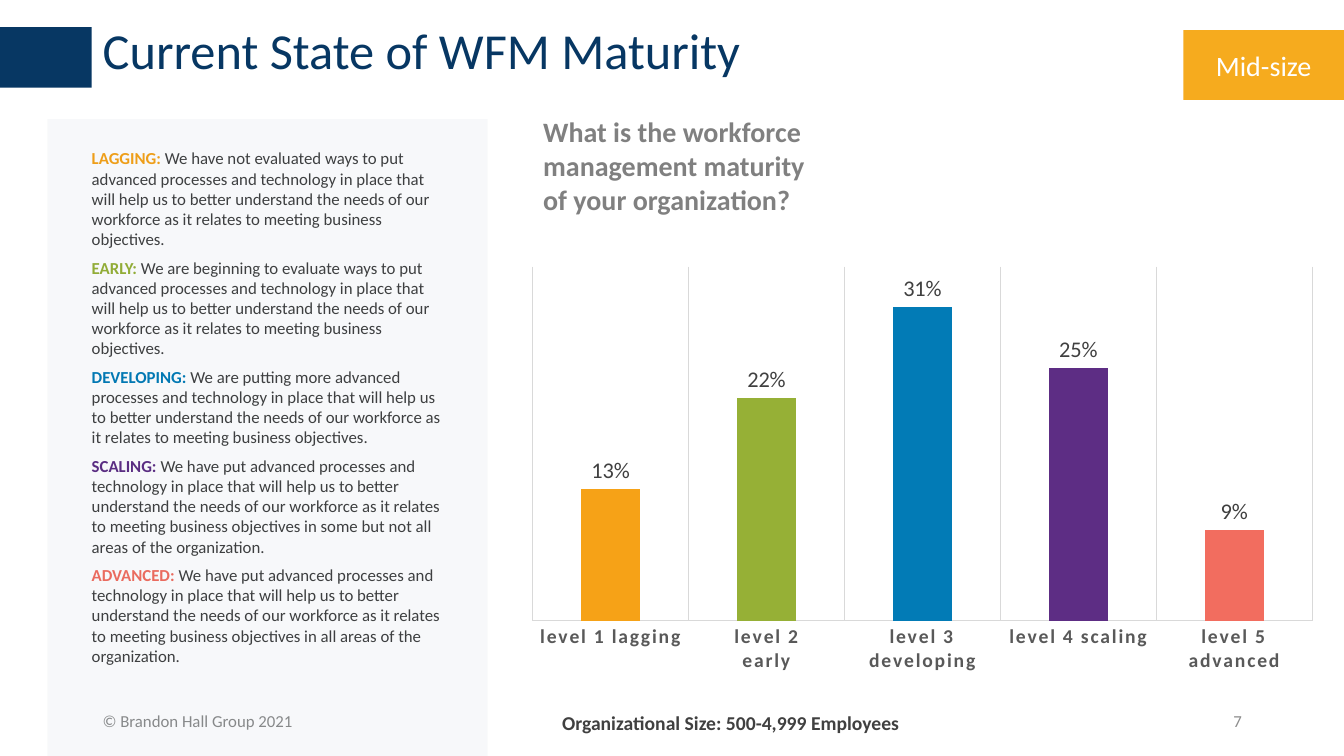
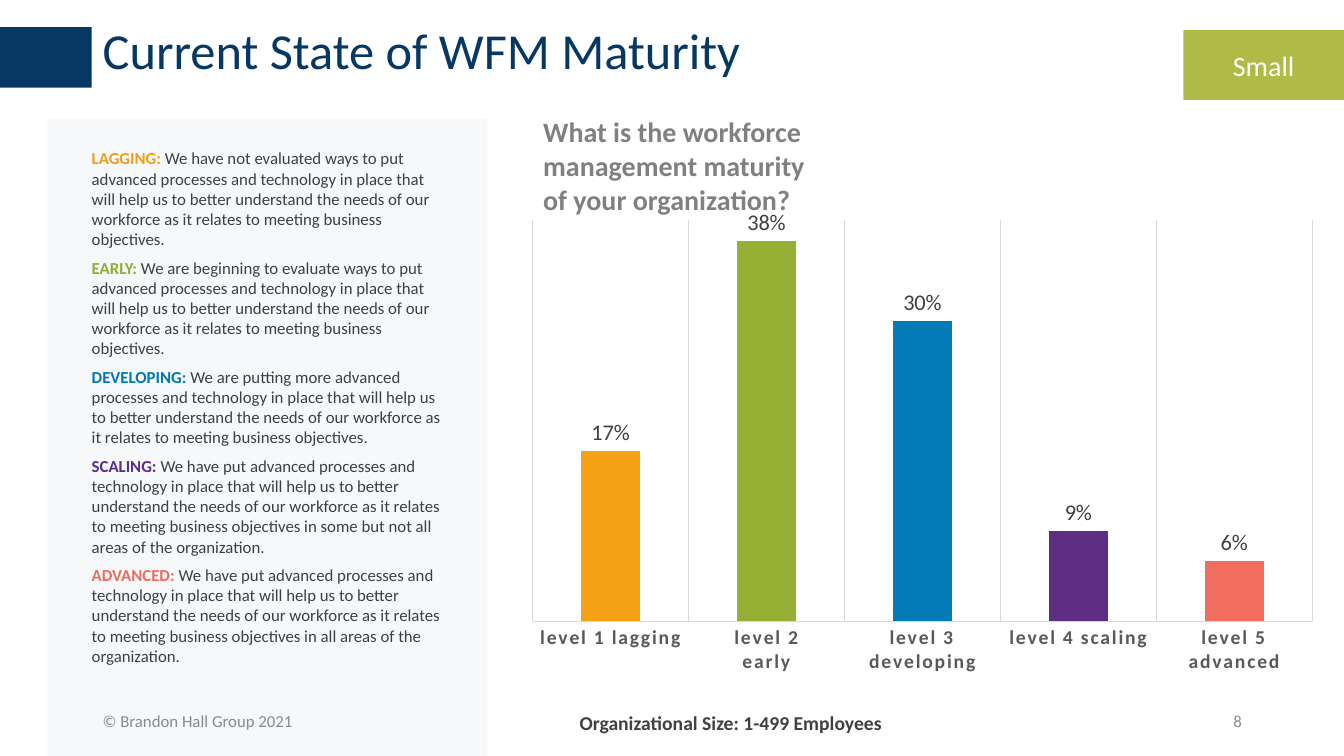
from dataclasses import dataclass
from typing import NamedTuple

from lxml.etree import SubElement
from pptx import Presentation
from pptx.chart.data import CategoryChartData
from pptx.dml.color import RGBColor
from pptx.enum.chart import XL_CHART_TYPE, XL_LABEL_POSITION, XL_TICK_LABEL_POSITION, XL_TICK_MARK
from pptx.enum.shapes import MSO_SHAPE
from pptx.enum.text import MSO_ANCHOR, MSO_AUTO_SIZE, PP_ALIGN
from pptx.oxml import parse_xml
from pptx.oxml.ns import nsdecls, qn
from pptx.util import Pt

FONT = "Calibri"
NAVY, INK, WHITE = "073763", "404040", "FFFFFF"
AXIS_TEXT, QUESTION_GRAY, FOOTER_GRAY, GRID = "595959", "808080", "8C8C8C", "D9D9D9"


class Box(NamedTuple):
    left: float
    top: float
    width: float
    height: float

    def lengths(self) -> list:
        return [Pt(value) for value in self]


BAND = Box(0, 19.4, 65.5, 43.2)
TITLE = Box(66.2, 15.1, 760, 57.6)
TAG = Box(845.3, 21.6, 114.7, 49.7)
PANEL = Box(33.8, 85, 314.6, 455)
DEFINITIONS = Box(58.3, 102.2, 266.4, 395.3)
CHART = Box(369.4, 101.5, 578.9, 391.7)
QUESTION = Box(380.9, 78.5, 204.5, 79.9)
SIZE_NOTE = Box(330.5, 504, 383, 24.5)
COPYRIGHT = Box(66.2, 500.4, 324, 28.8)
PAGE_NUMBER = Box(678.2, 500.4, 216, 28.8)

PRACTICE = (
    "advanced processes and technology in place that will help us to better understand "
    "the needs of our workforce as it relates to meeting business objectives"
)


@dataclass
class Level:
    name: str
    category: str
    color: str
    opening: str
    ending: str = "."


LEVELS = [
    Level("LAGGING", "level 1 lagging", "F6A217", "We have not evaluated ways to put"),
    Level("EARLY", "level 2\nearly", "96B036", "We are beginning to evaluate ways to put"),
    Level("DEVELOPING", "level 3 developing", "027BB6", "We are putting more"),
    Level("SCALING", "level 4 scaling", "5D2D84", "We have put",
          " in some but not all areas of the organization."),
    Level("ADVANCED", "level 5 advanced", "F26D5F", "We have put",
          " in all areas of the organization."),
]


@dataclass
class CompanySize:
    tag: str
    tag_color: str
    employees: str
    shares: list[float]
    axis_max: float
    plot_top: float
    plot_height: float
    page: int


COMPANY_SIZES = [
    CompanySize("Mid-size", "F6AB1E", "500-4,999", [0.13, 0.22, 0.31, 0.25, 0.09],
                0.35, 0.227, 0.646, 7),
    CompanySize("Small", "AEBC47", "1-499", [0.17, 0.38, 0.3, 0.09, 0.06],
                0.4, 0.143, 0.731, 8),
]


def rgb(color: str) -> RGBColor:
    return RGBColor.from_string(color)


def style(font, size: float, color: str, bold: bool = False) -> None:
    font.name, font.size, font.bold = FONT, Pt(size), bold
    font.color.rgb = rgb(color)


def write(paragraph, text: str, *, size: float, color: str, bold: bool = False,
          align=PP_ALIGN.LEFT) -> None:
    paragraph.alignment = align
    run = paragraph.add_run()
    run.text = text
    style(run.font, size, color, bold)


def set_frame(frame, anchor=MSO_ANCHOR.TOP) -> None:
    frame.word_wrap = True
    frame.auto_size = MSO_AUTO_SIZE.NONE
    frame.vertical_anchor = anchor


def place(shape, box: Box) -> None:
    shape.left, shape.top, shape.width, shape.height = box.lengths()


def add_label(slide, box: Box, text: str, anchor=MSO_ANCHOR.TOP, **text_format) -> None:
    frame = slide.shapes.add_textbox(*box.lengths()).text_frame
    set_frame(frame, anchor)
    write(frame.paragraphs[0], text, **text_format)


def add_rectangle(slide, box: Box, color: str, opacity: int = 100):
    rectangle = slide.shapes.add_shape(MSO_SHAPE.RECTANGLE, *box.lengths())
    rectangle.shadow.inherit = False
    rectangle.line.fill.background()
    rectangle.fill.solid()
    rectangle.fill.fore_color.rgb = rgb(color)
    if opacity < 100:
        tint = rectangle.fill._xPr.find(".//" + qn("a:srgbClr"))
        SubElement(tint, qn("a:alpha"), val=str(opacity * 1000))
    return rectangle


def fill_definitions(body) -> None:
    place(body, DEFINITIONS)
    set_frame(body.text_frame)
    for index, level in enumerate(LEVELS):
        frame = body.text_frame
        paragraph = frame.add_paragraph() if index else frame.paragraphs[0]
        properties = paragraph._p.get_or_add_pPr()
        properties.set("marL", "0")
        properties.set("indent", "0")
        SubElement(properties, qn("a:buNone"))
        paragraph.space_before, paragraph.space_after = Pt(0), Pt(6)
        write(paragraph, f"{level.name}: ", size=12, color=level.color, bold=True)
        write(paragraph, f"{level.opening} {PRACTICE}{level.ending}", size=12, color=INK)


def set_plot_area(chart, top: float, height: float) -> None:
    plot_area = chart._chartSpace.chart.plotArea
    for old in plot_area.findall(qn("c:layout")):
        plot_area.remove(old)
    plot_area.insert(0, parse_xml(
        f'<c:layout {nsdecls("c")}><c:manualLayout><c:layoutTarget val="inner"/>'
        '<c:xMode val="edge"/><c:yMode val="edge"/>'
        f'<c:x val="0.019"/><c:y val="{top}"/><c:w val="0.962"/><c:h val="{height}"/>'
        "</c:manualLayout></c:layout>"))


def add_maturity_chart(slide, company: CompanySize) -> None:
    data = CategoryChartData(number_format="0%")
    data.categories = [level.category for level in LEVELS]
    data.add_series("Series 1", company.shares)
    chart = slide.shapes.add_chart(XL_CHART_TYPE.COLUMN_CLUSTERED, *CHART.lengths(), data).chart
    chart.has_legend = chart.has_title = False
    style(chart.font, 10, "000000")
    set_plot_area(chart, company.plot_top, company.plot_height)

    # Axes
    shares_axis = chart.value_axis
    shares_axis.minimum_scale, shares_axis.maximum_scale = 0, company.axis_max
    shares_axis.has_major_gridlines = False
    shares_axis.visible = False
    levels_axis = chart.category_axis
    levels_axis.major_tick_mark = levels_axis.minor_tick_mark = XL_TICK_MARK.NONE
    levels_axis.tick_label_position = XL_TICK_LABEL_POSITION.NEXT_TO_AXIS
    levels_axis.has_major_gridlines = True
    for line in (levels_axis.format.line, levels_axis.major_gridlines.format.line):
        line.color.rgb = rgb(GRID)
        line.width = Pt(0.75)
    style(levels_axis.tick_labels.font, 14, AXIS_TEXT, bold=True)
    levels_axis.tick_labels.font._rPr.set("spc", "120")

    # Columns and their values
    plot = chart.plots[0]
    plot.gap_width, plot.overlap, plot.vary_by_categories = 163, -90, False
    for index, level in enumerate(LEVELS):
        fill = plot.series[0].points[index].format.fill
        fill.solid()
        fill.fore_color.rgb = rgb(level.color)
    labels = plot.series[0].data_labels
    labels.show_value = True
    labels.position = XL_LABEL_POSITION.OUTSIDE_END
    labels.number_format, labels.number_format_is_linked = "0%", False
    style(labels.font, 16, INK)


def add_frame(slide, page: int) -> None:
    """Title, band and footer shared by the slides."""
    add_rectangle(slide, BAND, NAVY)
    title = slide.shapes.title
    place(title, TITLE)
    set_frame(title.text_frame)
    heading = title.text_frame.paragraphs[0]
    heading.line_spacing = 0.9
    write(heading, "Current State of WFM Maturity", size=36, color=NAVY)
    footer = {"anchor": MSO_ANCHOR.MIDDLE, "size": 12, "color": FOOTER_GRAY}
    add_label(slide, COPYRIGHT, "© Brandon Hall Group 2021", **footer)
    add_label(slide, PAGE_NUMBER, str(page), align=PP_ALIGN.RIGHT, **footer)


def add_maturity_slide(prs, company: CompanySize) -> None:
    slide = prs.slides.add_slide(prs.slide_layouts[1])
    add_frame(slide, company.page)

    # Company size tag
    tag = add_rectangle(slide, TAG, company.tag_color)
    set_frame(tag.text_frame, MSO_ANCHOR.MIDDLE)
    write(tag.text_frame.paragraphs[0], company.tag, size=20, color=WHITE,
          align=PP_ALIGN.CENTER)

    # Level definitions
    add_rectangle(slide, PANEL, NAVY, opacity=3)
    fill_definitions(slide.placeholders[1])

    # Survey question and answers
    add_maturity_chart(slide, company)
    add_label(slide, SIZE_NOTE, f"Organizational Size: {company.employees} Employees",
              size=14, color=INK, bold=True, align=PP_ALIGN.CENTER)
    add_label(slide, QUESTION, "What is the workforce management maturity of your organization?",
              size=20, color=QUESTION_GRAY, bold=True)


def main() -> None:
    prs = Presentation()
    prs.slide_width, prs.slide_height = Pt(960), Pt(540)
    for company in COMPANY_SIZES:
        add_maturity_slide(prs, company)
    prs.save("out.pptx")


if __name__ == "__main__":
    main()
